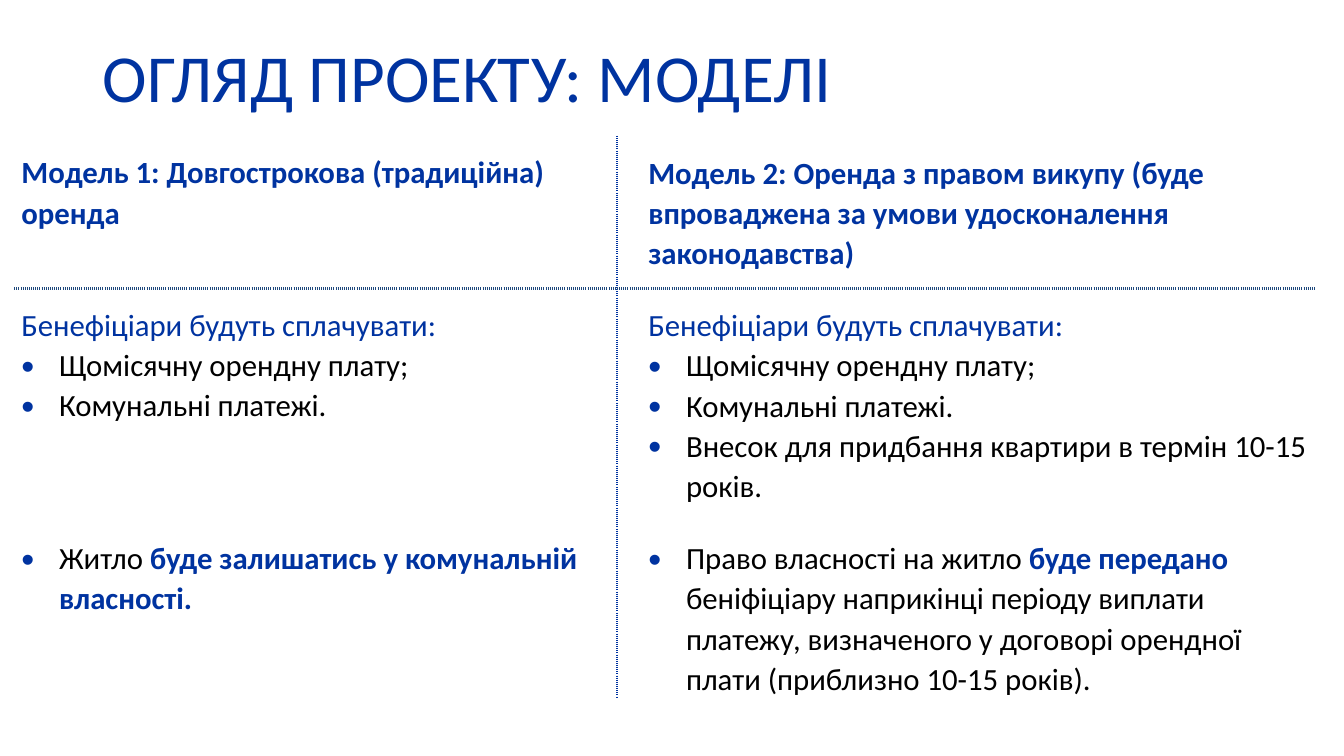
import dataclasses

import lxml.etree
import pptx
import pptx.dml.color
import pptx.enum.text
import pptx.oxml.ns
import pptx.util

Cm = pptx.util.Cm
Pt = pptx.util.Pt
RGB = pptx.dml.color.RGBColor
Anchor = pptx.enum.text.MSO_ANCHOR
qn = pptx.oxml.ns.qn


@dataclasses.dataclass(frozen=True)
class Theme:
    """Colours, font and type sizes of the slide."""

    blue: str = "0033A0"
    black: str = "000000"
    rule: str = "1F497D"
    font: str = "Calibri"
    title: int = 48
    body: int = 22
    spacer: int = 1


THEME = Theme()
HEAD, LEAD, BULLET = "head", "lead", "bullet"
PAYMENTS = [
    (LEAD, ["Бенефіціари будуть сплачувати:"]),
    (BULLET, ["Щомісячну орендну плату;"]),
    (BULLET, ["Комунальні платежі."]),
]
ROWS = [
    (
        [(HEAD, ["Модель 1: Довгострокова (традиційна) оренда"])],
        [(HEAD, ["Модель 2: Оренда з правом викупу (буде впроваджена "
                 "за умови удосконалення законодавства)"])],
    ),
    (
        PAYMENTS,
        PAYMENTS + [(BULLET, ["Внесок для придбання квартири в термін 10-15 років."])],
    ),
    (
        [(BULLET, ["Житло ", "буде залишатись у комунальній власності."])],
        [(BULLET, ["Право власності на житло ", "буде передано ",
                   "беніфіціару наприкінці періоду виплати платежу, визначеного "
                   "у договорі орендної плати (приблизно 10-15 років)."])],
    ),
]
COLUMN_WIDTHS = [Cm(15.19), Cm(17.58)]
ROW_HEIGHTS = [Cm(0), Cm(3.76), Cm(5.83), Cm(4.43)]


def add_child(parent, tag, **attrs):
    """Append a DrawingML element and return it."""
    return lxml.etree.SubElement(parent, qn(tag), attrs)


def style_font(font, color, bold):
    """Set the colour and weight of a font."""
    font.color.rgb = RGB.from_string(color)
    font.bold = bold


def add_bullet(p):
    """Give a paragraph a hanging blue bullet."""
    pPr = p._p.get_or_add_pPr()
    pPr.set("marL", str(Cm(0.95)))
    pPr.set("indent", str(-Cm(0.95)))
    add_child(add_child(pPr, "a:buClr"), "a:srgbClr", val=THEME.blue)
    add_child(pPr, "a:buSzPct", val="120000")
    add_child(pPr, "a:buFont", typeface="Arial")
    add_child(pPr, "a:buChar", char="•")


def fill_paragraph(p, kind, texts):
    """Write one paragraph, with every second run emphasised."""
    p.line_spacing = 1.07
    if kind == BULLET:
        add_bullet(p)
    p.font.name = THEME.font
    p.font.size = Pt(THEME.body)
    color = THEME.black if kind == BULLET else THEME.blue
    if len(texts) == 1:
        style_font(p.font, color, kind == HEAD)
    for i, text in enumerate(texts):
        r = p.add_run()
        r.text = text
        if len(texts) > 1:
            emphasised = i % 2 == 1
            style_font(r.font, THEME.blue if emphasised else color, emphasised)


def set_borders(cell, colors):
    """Draw dotted borders on the sides named in colors and clear the others."""
    tcPr = cell._tc.get_or_add_tcPr()
    for side in "LRTB":
        ln = add_child(tcPr, f"a:ln{side}", w=str(Pt(2.25)))
        if side in colors:
            add_child(add_child(ln, "a:solidFill"), "a:srgbClr", val=colors[side])
            add_child(ln, "a:prstDash", val="sysDot")
        else:
            add_child(ln, "a:noFill")
    cell.fill.background()


def flatten_cell(cell):
    """Reduce a cell of the top spacer row to its least height."""
    cell.margin_top = cell.margin_bottom = Cm(0)
    set_borders(cell, {})
    p = cell.text_frame.paragraphs[0]
    add_child(p._p, "a:endParaRPr", sz=str(THEME.spacer * 100))


def fill_cell(cell, row, column, paragraphs):
    """Format one table cell and write its paragraphs."""
    right, last = column == 1, row == len(ROWS)
    cell.margin_left = Cm(0.79 if right else 0.18)
    cell.margin_right = Cm(0.18)
    cell.margin_top = Cm(0.41)
    cell.margin_bottom = Cm(0.41 if right and not last else 0)
    cell.vertical_anchor = Anchor.MIDDLE if right else Anchor.TOP
    colors = {"L" if right else "R": THEME.blue}
    if not last:
        colors["B" if row == 1 else "T"] = THEME.rule
    set_borders(cell, colors)
    tf = cell.text_frame
    for i, (kind, texts) in enumerate(paragraphs):
        p = tf.add_paragraph() if i else tf.paragraphs[0]
        fill_paragraph(p, kind, texts)


def add_title(slide, left, top, width, height):
    """Place and format the slide title."""
    sp = slide.shapes.title
    sp.left, sp.top, sp.width, sp.height = left, top, width, height
    tf = sp.text_frame
    tf.text = "ОГЛЯД ПРОЕКТУ: МОДЕЛІ"
    tf.vertical_anchor = Anchor.MIDDLE
    p = tf.paragraphs[0]
    p.alignment = pptx.enum.text.PP_ALIGN.LEFT
    p.line_spacing = 0.9
    p.font.name = THEME.font
    p.font.size = Pt(THEME.title)
    style_font(p.font, THEME.blue, False)


def add_models(slide, left, top):
    """Place the table that compares the two rental models."""
    table = slide.shapes.add_table(
        len(ROW_HEIGHTS), len(COLUMN_WIDTHS), left, top,
        sum(COLUMN_WIDTHS), sum(ROW_HEIGHTS),
    ).table
    table.first_row = table.horz_banding = False
    for column, width in zip(table.columns, COLUMN_WIDTHS):
        column.width = width
    for row, height in zip(table.rows, ROW_HEIGHTS):
        row.height = height
    for cell in table.rows[0].cells:
        flatten_cell(cell)
    for i, cells in enumerate(ROWS, start=1):
        for j, paragraphs in enumerate(cells):
            fill_cell(table.cell(i, j), i, j, paragraphs)


def main():
    """Build and save the slide."""
    prs = pptx.Presentation()
    prs.slide_width, prs.slide_height = Cm(33.87), Cm(19.05)
    slide = prs.slides.add_slide(prs.slide_layouts[5])
    add_title(slide, Cm(2.34), Cm(0.51), Cm(29.21), Cm(3.07))
    add_models(slide, Cm(0.36), Cm(3.38))
    prs.save("out.pptx")


if __name__ == "__main__":
    main()
